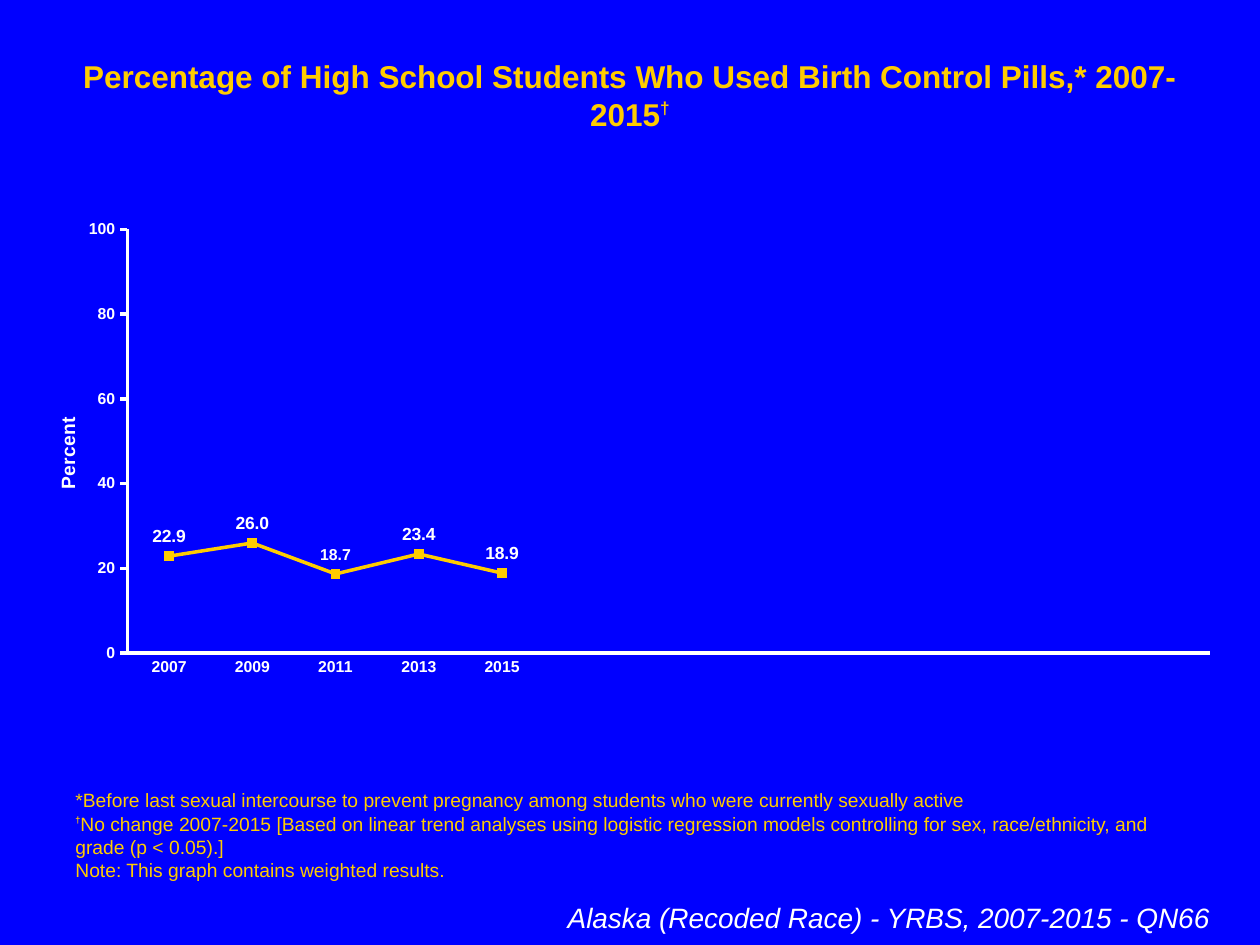
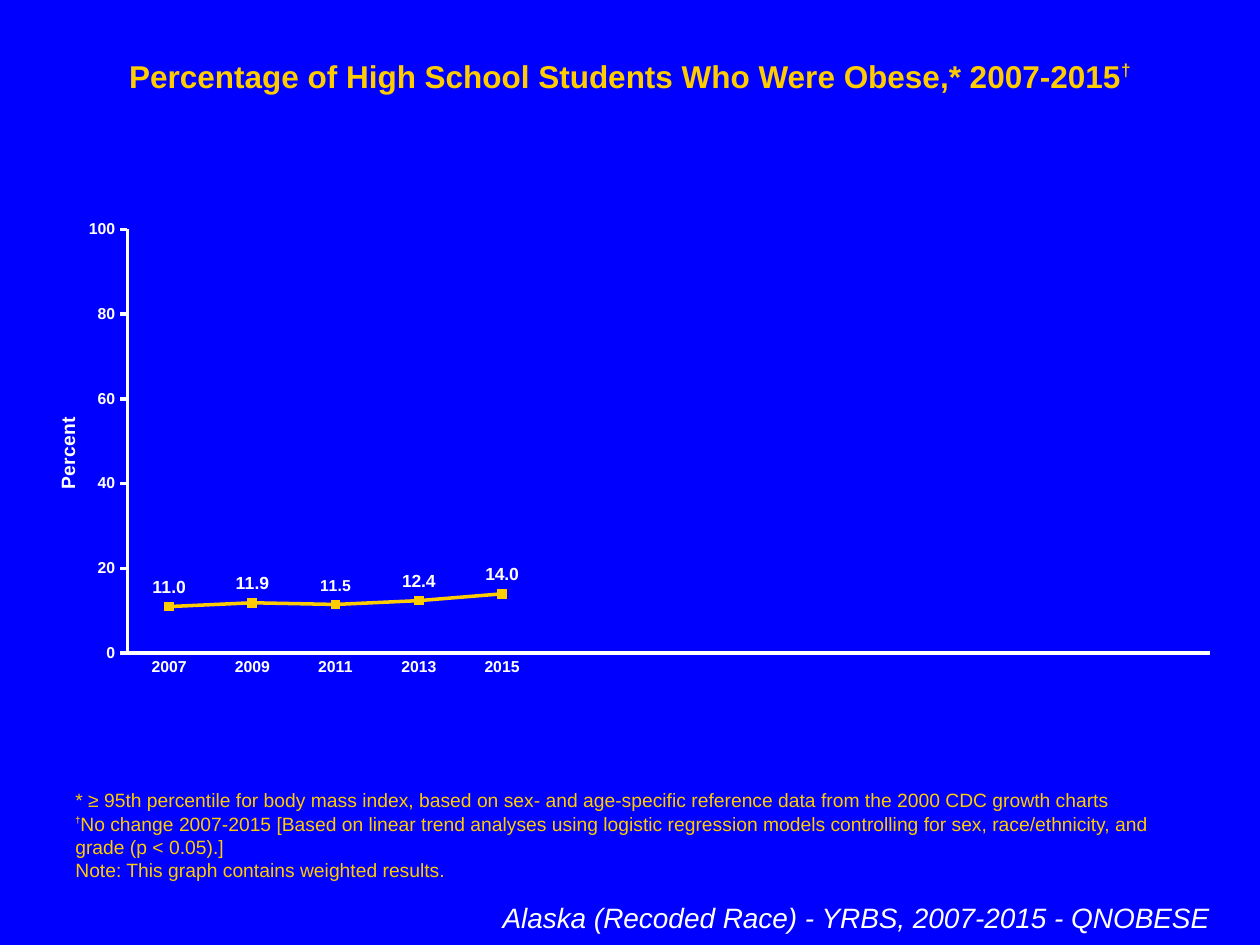
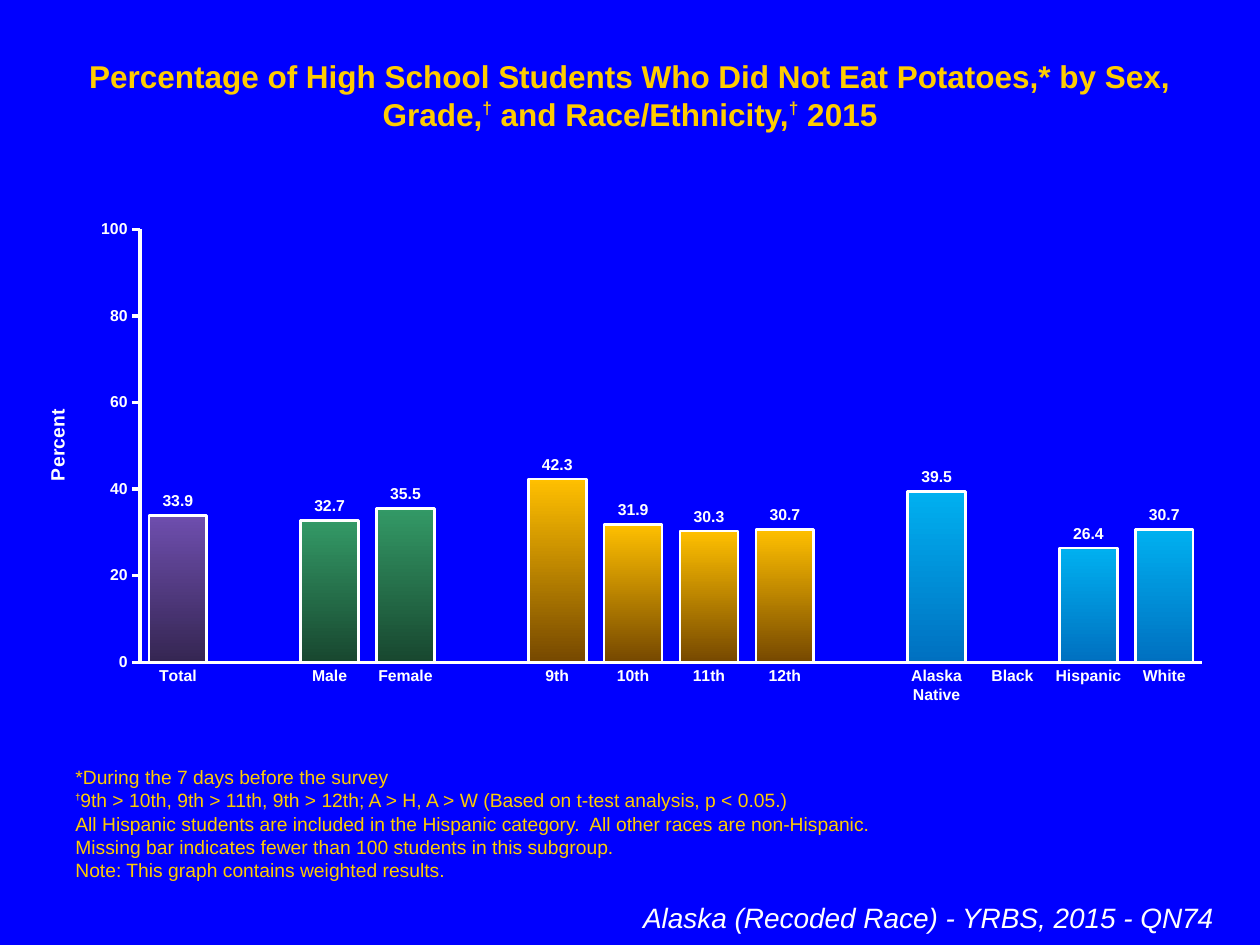
from lxml import etree
from pptx import Presentation
from pptx.chart.data import CategoryChartData
from pptx.dml.color import RGBColor
from pptx.enum.chart import XL_CHART_TYPE as ChartType
from pptx.enum.chart import XL_LABEL_POSITION as LabelPosition
from pptx.enum.chart import XL_MARKER_STYLE as MarkerStyle
from pptx.enum.chart import XL_TICK_MARK as TickMark
from pptx.enum.text import MSO_ANCHOR as Anchor
from pptx.enum.text import MSO_AUTO_SIZE as AutoSize
from pptx.enum.text import PP_ALIGN as Align
from pptx.oxml.ns import qn
from pptx.util import Cm, Pt

FONT = "Arial"
BLUE, GOLD, WHITE = "0000FF", "FFCC00", "FFFFFF"
DAGGER = "†"

TREND_NOTE = ("†No change 2007-2015 [Based on linear trend analyses using logistic regression "
              "models controlling for sex, race/ethnicity, and grade (p < 0.05).]")
WEIGHT_NOTE = "Note: This graph contains weighted results."
YEARS = ["2007", "2009", "2011", "2013", "2015"]
YEAR_SLOTS = 13
SMALL_LABEL_YEAR = YEARS.index("2011")

TREND_SLIDES = [
    {
        "title": "Percentage of High School Students Who Used Birth Control Pills,* 2007-2015†",
        "notes": ["*Before last sexual intercourse to prevent pregnancy among students who were "
                  "currently sexually active", TREND_NOTE, WEIGHT_NOTE],
        "footer": "Alaska (Recoded Race) - YRBS, 2007-2015 - QN66",
        "values": [22.9, 26.0, 18.7, 23.4, 18.9],
    },
    {
        "title": "Percentage of High School Students Who Were Obese,* 2007-2015†",
        "notes": ["* ≥ 95th percentile for body mass index, based on sex- and age-specific "
                  "reference data from the 2000 CDC growth charts", TREND_NOTE, WEIGHT_NOTE],
        "footer": "Alaska (Recoded Race) - YRBS, 2007-2015 - QNOBESE",
        "values": [11.0, 11.9, 11.5, 12.4, 14.0],
    },
]

SUBGROUP_SLIDE = {
    "title": "Percentage of High School Students Who Did Not Eat Potatoes,* by Sex, Grade,† "
             "and Race/Ethnicity,† 2015",
    "notes": ["*During the 7 days before the survey",
              "†9th > 10th, 9th > 11th, 9th > 12th; A > H, A > W (Based on t-test analysis, p < 0.05.)",
              "All Hispanic students are included in the Hispanic category.  "
              "All other races are non-Hispanic.",
              "Missing bar indicates fewer than 100 students in this subgroup.",
              WEIGHT_NOTE],
    "footer": "Alaska (Recoded Race) - YRBS, 2015 - QN74",
    # top colour, bottom colour, bars
    "groups": [
        ("6E4EAE", "352652", [("Total", 33.9)]),
        ("339966", "18472F", [("Male", 32.7), ("Female", 35.5)]),
        ("FFC000", "764800", [("9th", 42.3), ("10th", 31.9), ("11th", 30.3), ("12th", 30.7)]),
        ("00B0F0", "0070C0", [("Alaska Native", 39.5), ("Black", None),
                              ("Hispanic", 26.4), ("White", 30.7)]),
    ],
}

# left, top, width, height in centimetres
TITLE_BOX = (1.27, 1.02, 22.86, 1.02)
NOTES_BOX = (1.27, 17.15, 22.86, 0.74)
TREND_FOOTER_BOX = (4.88, 18.03, 19.76, 0.94)
SUBGROUP_FOOTER_BOX = (0.84, 18.03, 23.88, 0.94)
TREND_CHART_BOX = (0.64, 4.24, 24.13, 10.16)
SUBGROUP_CHART_BOX = (0.43, 4.24, 24.28, 10.16)

# left, top, width, height in percent of the chart
TREND_PLOT_AREA = (8, 3.8, 90.4, 84.1)
SUBGROUP_PLOT_AREA = (9.85, 3.8, 88.2, 85.9)
AXIS_TITLE_LEFT, TREND_AXIS_TITLE_TOP, SUBGROUP_AXIS_TITLE_TOP = 1.6, 40.4, 38.7


def color(value):
    return RGBColor.from_string(value)


def style_font(font, size, fill=WHITE, bold=False, italic=False):
    font.name, font.size = FONT, Pt(size)
    font.bold, font.italic = bold, italic
    font.color.rgb = color(fill)


def style_line(line, fill, width):
    line.color.rgb = color(fill)
    line.width = Pt(width)


def add_text(slide, box, paragraphs, size, dagger=(9, 50), fill=GOLD, bold=False, italic=False,
             align=Align.LEFT, anchor=Anchor.TOP):
    """Add a growing text box; daggers are raised, with dagger = (size, rise in percent)."""
    frame = slide.shapes.add_textbox(*map(Cm, box)).text_frame
    frame.word_wrap = True
    frame.auto_size = AutoSize.SHAPE_TO_FIT_TEXT
    frame.vertical_anchor = anchor
    for index, text in enumerate(paragraphs):
        paragraph = frame.add_paragraph() if index else frame.paragraphs[0]
        paragraph.alignment = align
        for position, part in enumerate(text.split(DAGGER)):
            if position:
                run = paragraph.add_run()
                run.text = DAGGER
                style_font(run.font, dagger[0], fill, True, italic)
                run._r.get_or_add_rPr().set("baseline", str(dagger[1] * 1000))
            if part:
                run = paragraph.add_run()
                run.text = part
                style_font(run.font, size, fill, bold, italic)


def add_frame(presentation, content, footer_box):
    """Add a slide with its title, notes and footer."""
    slide = presentation.slides.add_slide(presentation.slide_layouts[6])
    add_text(slide, TITLE_BOX, [content["title"]], 18, dagger=(17, 40), bold=True,
             align=Align.CENTER)
    add_text(slide, NOTES_BOX, content["notes"], 11, anchor=Anchor.BOTTOM)
    add_text(slide, footer_box, [content["footer"]], 16, fill=WHITE, italic=True,
             align=Align.RIGHT)
    return slide


def set_layout(parent, index, modes, **percents):
    """Place a chart part by hand, in percent of the chart."""
    for layout in parent.findall(qn("c:layout")):
        parent.remove(layout)
    layout = etree.Element(qn("c:layout"))
    manual = etree.SubElement(layout, qn("c:manualLayout"))
    fractions = {name: round(value / 100, 4) for name, value in percents.items()}
    for name, value in {**modes, **fractions}.items():
        etree.SubElement(manual, qn("c:" + name)).set("val", str(value))
    parent.insert(index, layout)


def add_percent_chart(slide, kind, box, categories, values, plot_area, title_top,
                      label_size, label_position):
    """Add a one-series chart with a 0-100 percent axis; return its plot."""
    data = CategoryChartData(number_format="0.0")
    data.categories = categories
    data.add_series("Series 1", values)
    chart = slide.shapes.add_chart(kind, *map(Cm, box), data).chart
    chart.has_legend = chart.has_title = False
    style_font(chart.font, 18)

    for axis in (chart.category_axis, chart.value_axis):
        axis.has_major_gridlines = False
        axis.minor_tick_mark = TickMark.NONE
        style_font(axis.tick_labels.font, 9, bold=True)
        style_line(axis.format.line, WHITE, 2)
    chart.category_axis.major_tick_mark = TickMark.NONE

    axis = chart.value_axis
    axis.major_tick_mark = TickMark.OUTSIDE
    axis.minimum_scale, axis.maximum_scale, axis.major_unit = 0, 100, 20
    axis.tick_labels.number_format = "#,##0"
    axis.tick_labels.number_format_is_linked = False
    run = axis.axis_title.text_frame.paragraphs[0].add_run()
    run.text = "Percent"
    style_font(run.font, 11, bold=True)
    title = axis.axis_title._element
    title.find(".//" + qn("a:bodyPr")).set("rot", "-5400000")
    edges = {"xMode": "edge", "yMode": "edge"}
    set_layout(title, 1, edges, x=AXIS_TITLE_LEFT, y=title_top)

    left, top, width, height = plot_area
    set_layout(chart._chartSpace.find(".//" + qn("c:plotArea")), 0,
               {"layoutTarget": "inner", **edges}, x=left, y=top, w=width, h=height)

    plot = chart.plots[0]
    plot.vary_by_categories = False
    labels = plot.series[0].data_labels
    labels.show_value = True
    labels.number_format = "#,##0.0"
    labels.number_format_is_linked = False
    labels.position = label_position
    style_font(labels.font, label_size, bold=True)
    return plot


def add_trend_slide(presentation, content):
    slide = add_frame(presentation, content, TREND_FOOTER_BOX)
    blanks = YEAR_SLOTS - len(YEARS)
    plot = add_percent_chart(slide, ChartType.LINE_MARKERS, TREND_CHART_BOX,
                             YEARS + [""] * blanks, content["values"] + [None] * blanks,
                             TREND_PLOT_AREA, TREND_AXIS_TITLE_TOP, 10, LabelPosition.ABOVE)
    series = plot.series[0]
    series.smooth = False
    style_line(series.format.line, GOLD, 2)
    marker = series.marker
    marker.style, marker.size = MarkerStyle.SQUARE, 5
    marker.format.fill.solid()
    marker.format.fill.fore_color.rgb = color(GOLD)
    marker.format.line.color.rgb = color(GOLD)
    label = series.points[SMALL_LABEL_YEAR].data_label
    style_font(label.font, 9, bold=True)
    label.position = LabelPosition.ABOVE


def add_subgroup_slide(presentation, content):
    slide = add_frame(presentation, content, SUBGROUP_FOOTER_BOX)
    bars = []
    for top, bottom, members in content["groups"]:
        if bars:
            bars.append(("", None, None))
        bars += [(name, value, (top, bottom)) for name, value in members]
    plot = add_percent_chart(slide, ChartType.COLUMN_CLUSTERED, SUBGROUP_CHART_BOX,
                             [bar[0] for bar in bars], [bar[1] for bar in bars],
                             SUBGROUP_PLOT_AREA, SUBGROUP_AXIS_TITLE_TOP, 9,
                             LabelPosition.OUTSIDE_END)
    plot.gap_width, plot.overlap = 31, 100
    for index, (_, _, shades) in enumerate(bars):
        if shades:
            point_format = plot.series[0].points[index].format
            point_format.fill.gradient()
            point_format.fill.gradient_angle = 270
            for stop, shade in zip(point_format.fill.gradient_stops, shades):
                stop.color.rgb = color(shade)
            style_line(point_format.line, WHITE, 1.5)


def main():
    presentation = Presentation()
    presentation.slide_width, presentation.slide_height = Cm(25.4), Cm(19.05)
    background = presentation.slide_master.background.fill
    background.solid()
    background.fore_color.rgb = color(BLUE)
    for content in TREND_SLIDES:
        add_trend_slide(presentation, content)
    add_subgroup_slide(presentation, SUBGROUP_SLIDE)
    presentation.save("out.pptx")


if __name__ == "__main__":
    main()
